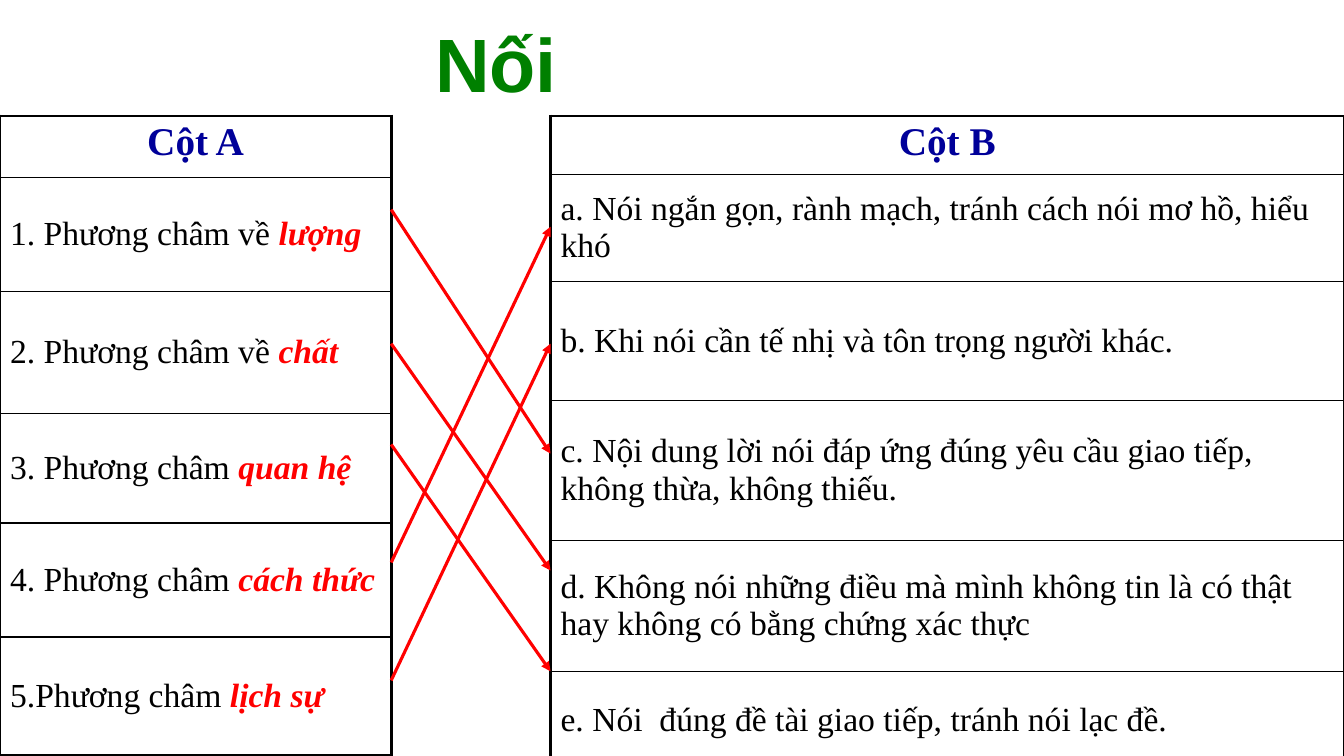
from lxml import etree
from pptx import Presentation
from pptx.dml.color import RGBColor
from pptx.enum.shapes import MSO_CONNECTOR
from pptx.enum.text import MSO_ANCHOR, PP_ALIGN
from pptx.oxml.ns import qn
from pptx.util import Inches, Pt

CENTER, LEFT = PP_ALIGN.CENTER, PP_ALIGN.LEFT
TOP, MIDDLE = MSO_ANCHOR.TOP, MSO_ANCHOR.MIDDLE
STRAIGHT = MSO_CONNECTOR.STRAIGHT

GREEN = RGBColor(0x00, 0x80, 0x00)
NAVY = RGBColor(0x00, 0x00, 0x99)
RED = RGBColor(0xFF, 0x00, 0x00)
BLACK = RGBColor(0x00, 0x00, 0x00)
SERIF = "Times New Roman"

# Content: each row is (plain text, highlighted text)
TITLE = "Nối"
COLUMN_A = ("Cột A", [
    ("1. Phương châm về ", "lượng"),
    ("2. Phương châm về ", "chất"),
    ("3. Phương châm ", "quan hệ"),
    ("4. Phương châm ", "cách thức"),
    ("5.Phương châm ", "lịch sự"),
])
COLUMN_B = ("Cột B", [
    ("a. Nói ngắn gọn, rành mạch, tránh cách nói mơ hồ, hiểu khó", ""),
    ("b. Khi nói cần tế nhị và tôn trọng người khác.", ""),
    ("c. Nội dung lời nói đáp ứng đúng yêu cầu giao tiếp, không thừa, không thiếu.", ""),
    ("d. Không nói những điều mà mình không tin là có thật hay không có bằng chứng xác thực", ""),
    ("e. Nói  đúng đề tài giao tiếp, tránh nói lạc đề.", ""),
])
MATCHES = ["1c", "2d", "3e", "4a", "5b"]

# Layout in inches
SLIDE_WIDTH, SLIDE_HEIGHT = 13.33, 7.5
TABLE_TOP = 1.15
A_RIGHT, B_LEFT = 3.88, 5.46
A_ROWS = [0.61, 1.13, 1.21, 1.09, 1.13, 1.17]
B_ROWS = [0.58, 1.06, 1.18, 1.39, 1.3, 0.97]
ARROW_START = dict(zip("12345", [2.08, 3.41, 4.41, 5.58, 6.75]))
ARROW_END = dict(zip("abcde", [2.25, 3.41, 4.5, 5.66, 6.66]))
THICK, THIN = 2.25, 1


def add_text(para, text, size=24, color=BLACK, font=SERIF, bold=False, italic=False):
    span = para.add_run()
    span.text = text
    span.font.size = Pt(size)
    span.font.name = font
    span.font.color.rgb = color
    span.font.bold = bold
    span.font.italic = italic


def set_borders(cell, **widths):
    properties = cell._tc.get_or_add_tcPr()
    for side, width in widths.items():
        line = etree.SubElement(properties, qn(f"a:ln{side}"), w=str(Pt(width)))
        fill = etree.SubElement(line, qn("a:solidFill"))
        etree.SubElement(fill, qn("a:srgbClr"), val=str(BLACK))


def add_column(page, content, left, width, heights):
    heading, rows = content
    frame = page.shapes.add_table(len(heights), 1, Inches(left), Inches(TABLE_TOP),
                                  Inches(width), Inches(sum(heights)))
    table = frame.table
    table.first_row = table.horz_banding = False
    table.columns[0].width = Inches(width)
    last = len(heights) - 1
    for index, height in enumerate(heights):
        table.rows[index].height = Inches(height)
        cell = table.cell(index, 0)
        set_borders(cell, L=THICK, R=THICK, T=THICK if index == 0 else THIN,
                    B=THICK if index == last else THIN)
        cell.fill.background()
        cell.vertical_anchor = MIDDLE if index else TOP
        para = cell.text_frame.paragraphs[0]
        para.alignment = LEFT if index else CENTER
        if index == 0:
            add_text(para, heading, size=28, color=NAVY, bold=True)
            continue
        plain, highlight = rows[index - 1]
        add_text(para, plain)
        if highlight:
            add_text(para, highlight, color=RED, bold=True, italic=True)


def add_arrow(page, start, end):
    arrow = page.shapes.add_connector(STRAIGHT, Inches(A_RIGHT), Inches(start),
                                      Inches(B_LEFT), Inches(end))
    arrow.line.color.rgb = RED
    arrow.line.width = Pt(2.25)
    etree.SubElement(arrow.line._get_or_add_ln(), qn("a:tailEnd"), type="triangle")
    etree.SubElement(arrow._element.spPr, qn("a:effectLst"))


def main():
    deck = Presentation()
    deck.slide_width, deck.slide_height = Inches(SLIDE_WIDTH), Inches(SLIDE_HEIGHT)
    page = deck.slides.add_slide(deck.slide_layouts[5])

    # Title, pushed right of centre by its left margin
    title = page.shapes.title
    title.left, title.top = Inches(2.03), Inches(0.21)
    title.width, title.height = Inches(4.95), Inches(0.92)
    title.text_frame.margin_left = Inches(0.93)
    title.text_frame.vertical_anchor = MIDDLE
    para = title.text_frame.paragraphs[0]
    para.alignment = CENTER
    para.line_spacing = 0.9
    add_text(para, TITLE, size=54, color=GREEN, font="Arial", bold=True)

    # The two columns to match
    add_column(page, COLUMN_A, 0, A_RIGHT, A_ROWS)
    add_column(page, COLUMN_B, B_LEFT, SLIDE_WIDTH - B_LEFT, B_ROWS)

    # Arrows from each number to its letter
    for number, letter in MATCHES:
        add_arrow(page, ARROW_START[number], ARROW_END[letter])

    deck.save("out.pptx")


if __name__ == "__main__":
    main()
